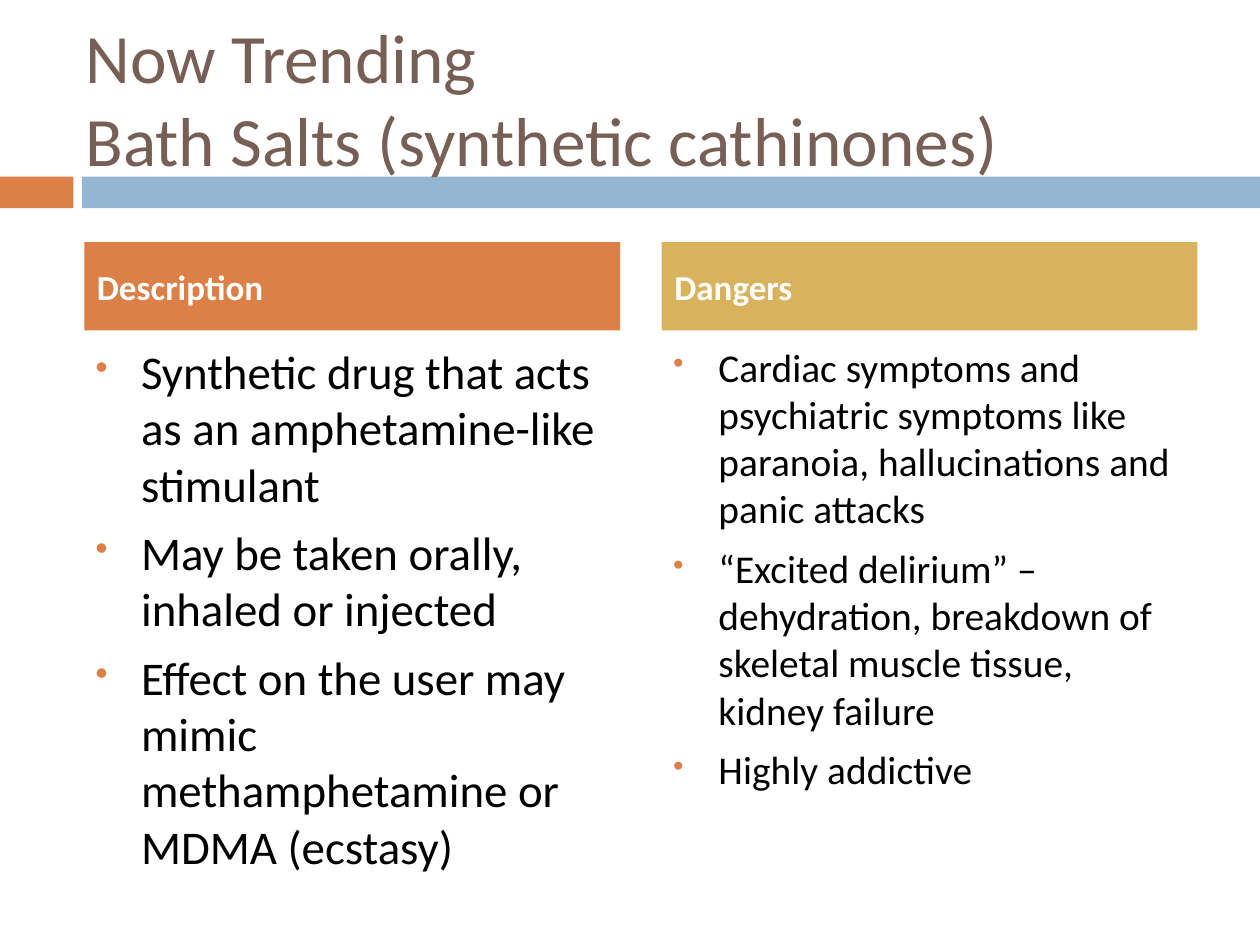
import pptx
import pptx.dml.color
import pptx.enum.shapes
import pptx.enum.text
import pptx.util
from lxml import etree
from pptx.oxml.ns import qn

Cm, Pt = pptx.util.Cm, pptx.util.Pt
FONT = "Calibri"
ORANGE, BLUE, GOLD = "DD8047", "94B6D2", "D8B25C"
BROWN, BLACK, WHITE = "775F55", "000000", "FFFFFF"

COLUMNS = [
    ("Description", ORANGE, 26.8, [
        "Synthetic drug that acts as an amphetamine-like stimulant",
        "May be taken orally, inhaled or injected",
        "Effect on the user may mimic methamphetamine or MDMA (ecstasy)",
    ]),
    ("Dangers", GOLD, 22.5, [
        "Cardiac symptoms and psychiatric symptoms like paranoia, "
        "hallucinations and panic attacks",
        "“Excited delirium” – dehydration, breakdown of skeletal muscle "
        "tissue, kidney failure",
        "Highly addictive",
    ]),
]


def color(value):
    return pptx.dml.color.RGBColor.from_string(value)


def place(sp, x, y, w, h):
    sp.left, sp.top, sp.width, sp.height = Cm(x), Cm(y), Cm(w), Cm(h)


def prepare(sp, anchor):
    tf = sp.text_frame
    tf.word_wrap = True
    tf.auto_size = pptx.enum.text.MSO_AUTO_SIZE.NONE
    tf.vertical_anchor = anchor
    return tf


def add_run(p, text, size, hex_color, bold=False):
    p.alignment = pptx.enum.text.PP_ALIGN.LEFT
    r = p.add_run()
    r.text = text
    r.font.name, r.font.size, r.font.bold = FONT, Pt(size), bold
    r.font.color.rgb = color(hex_color)


def add_bullet(p):
    pPr = p._p.get_or_add_pPr()
    pPr.set("marL", str(Cm(0.89)))
    pPr.set("indent", str(-Cm(0.89)))
    clr = etree.SubElement(pPr, qn("a:buClr"))
    etree.SubElement(clr, qn("a:srgbClr"), val=ORANGE)
    etree.SubElement(pPr, qn("a:buSzPct"), val="60000")
    etree.SubElement(pPr, qn("a:buFont"), typeface="Wingdings 2")
    etree.SubElement(pPr, qn("a:buChar"), char="◻")


def divider(s, x, y, w, h):
    """Two-coloured bar, kept behind the text."""
    tab, gap = 1.48, 0.17
    parts = [(x, tab, ORANGE), (x + tab + gap, w - tab - gap, BLUE)]
    for left, width, fill in parts:
        sp = s.shapes.add_shape(pptx.enum.shapes.MSO_SHAPE.RECTANGLE,
                                Cm(left), Cm(y), Cm(width), Cm(h))
        sp.shadow.inherit = False
        sp.fill.solid()
        sp.fill.fore_color.rgb = color(fill)
        sp.line.fill.background()
        s.shapes._spTree.insert(2, sp._element)


def title(sp, x, y, w, h):
    place(sp, x, y, w, h)
    p = prepare(sp, pptx.enum.text.MSO_ANCHOR.MIDDLE).paragraphs[0]
    add_run(p, "Now Trending", 39.6, BROWN)
    p.add_line_break()
    add_run(p, "Bath Salts (synthetic cathinones)", 39.6, BROWN)


def column(head, body, content, x, y, w, h):
    """Coloured heading with a bulleted list below it."""
    heading, fill, size, items = content
    head_h, gap = 1.78, 0.12

    # Heading
    place(head, x, y, w, head_h)
    head.fill.solid()
    head.fill.fore_color.rgb = color(fill)
    p = prepare(head, pptx.enum.text.MSO_ANCHOR.MIDDLE).paragraphs[0]
    p.space_before = Pt(7)
    add_run(p, heading, 20, WHITE, bold=True)

    # List
    place(body, x, y + head_h + gap, w, h - head_h - gap)
    tf = prepare(body, pptx.enum.text.MSO_ANCHOR.TOP)
    for i, item in enumerate(items):
        p = tf.add_paragraph() if i else tf.paragraphs[0]
        p.space_before = Pt(7)
        add_run(p, item, size, BLACK)
        add_bullet(p)


def main():
    prs = pptx.Presentation()
    prs.slide_width, prs.slide_height = Cm(25.4), Cm(19.05)
    s = prs.slides.add_slide(prs.slide_layouts.get_by_name("Comparison"))
    sps = list(s.placeholders)

    divider(s, 0, 3.56, 25.4, 0.64)
    title(sps[0], 1.47, 0.76, 22.66, 2.41)
    for i, content in enumerate(COLUMNS):
        head, body = sps[1 + 2 * i:3 + 2 * i]
        column(head, body, content, 1.7 + 11.64 * i, 4.88, 10.8, 11.86)

    prs.save("out.pptx")


if __name__ == "__main__":
    main()
